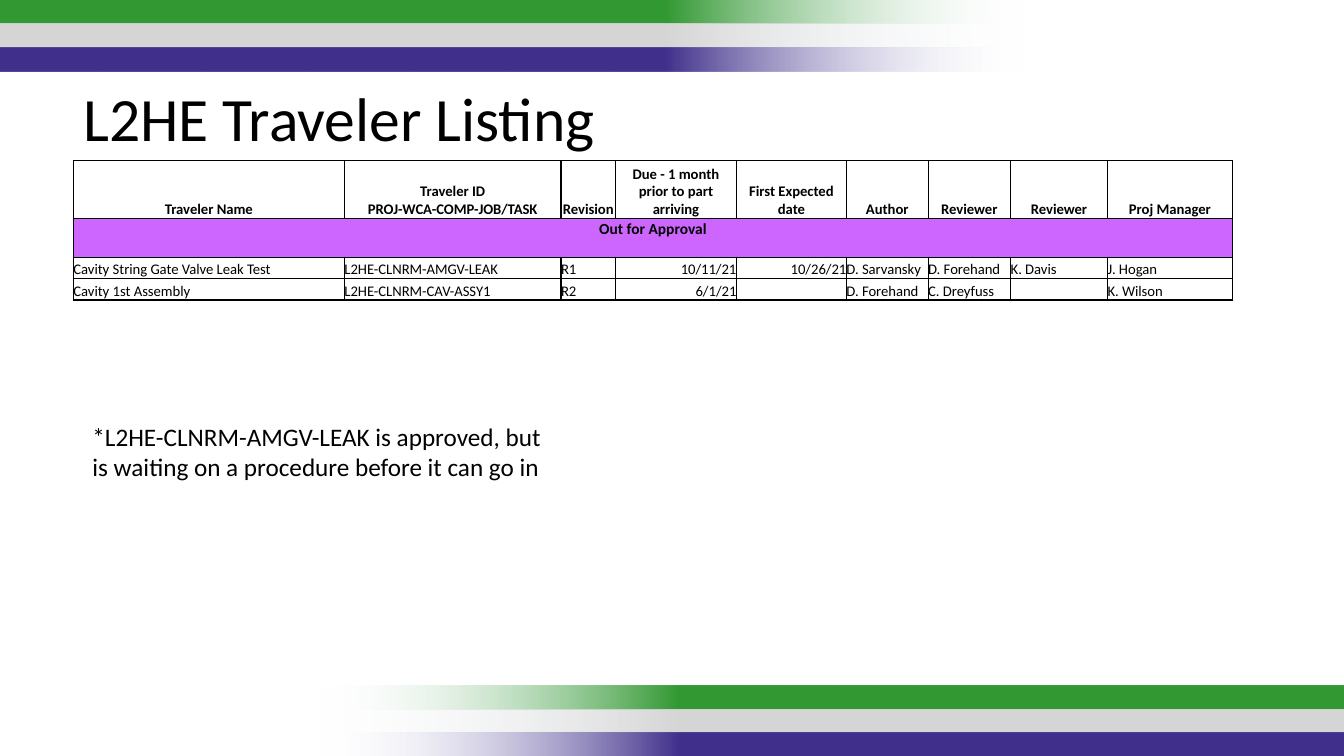
from dataclasses import dataclass

from lxml.etree import SubElement
from pptx import Presentation
from pptx.dml.color import RGBColor
from pptx.enum.shapes import MSO_SHAPE as Shape
from pptx.enum.text import MSO_ANCHOR as Anchor, PP_ALIGN as Align
from pptx.oxml import parse_xml
from pptx.oxml.ns import nsdecls, qn
from pptx.util import Cm, Pt


@dataclass(frozen=True)
class Theme:
    """Colours and type sizes of the slide."""
    font: str = "Calibri"
    ink: str = "000000"
    fade: str = "F7FAFD"
    stripes: tuple = ("339933", "D6D6D6", "42318C")
    status: str = "CC66FF"
    title_size: float = 44
    note_size: float = 18
    status_size: float = 11
    cell_size: float = 10.5
    rule_width: float = 1


THEME = Theme()
HEADINGS = ["Traveler Name", "Traveler ID\vPROJ-WCA-COMP-JOB/TASK", "Revision",
            "Due - 1 month prior to part arriving", "First Expected date",
            "Author", "Reviewer", "Reviewer", "Proj Manager"]
STATUS = "Out for Approval"
TRAVELERS = [
    ["Cavity String Gate Valve Leak Test", "L2HE-CLNRM-AMGV-LEAK", "R1", "10/11/21",
     "10/26/21", "D. Sarvansky", "D. Forehand", "K. Davis", "J. Hogan"],
    ["Cavity 1st Assembly", "L2HE-CLNRM-CAV-ASSY1", "R2", "6/1/21",
     "", "D. Forehand", "C. Dreyfuss", "", "K. Wilson"],
]
COLUMN_WIDTHS = [6.83, 5.46, 1.37, 3.05, 2.77, 2.06, 2.08, 2.44, 3.15]
ROW_HEIGHTS = [1.46, 0.97, 0.54, 0.54]
DATE_COLUMNS = (3, 4)


def style(paragraph, size, bold=False, align=Align.LEFT):
    """Set the type of one paragraph."""
    paragraph.alignment = align
    font = paragraph.font
    font.name, font.size, font.bold = THEME.font, Pt(size), bold
    font.color.rgb = RGBColor.from_string(THEME.ink)


def add_stripes(slide, left, top, width, height, rotation=0):
    """Stack the three stripes, each fading out towards one end."""
    pitch = height / len(THEME.stripes)
    for index, colour in enumerate(THEME.stripes):
        stripe = slide.shapes.add_shape(Shape.RECTANGLE, Cm(left), Cm(top + index * pitch),
                                        Cm(width), Cm(pitch))
        stripe.rotation = rotation
        stripe.shadow.inherit = False
        stripe.line.fill.background()
        stripe.fill.gradient()
        stripe.fill.gradient_angle = 0
        stops = stripe.fill._fill._gradFill.find(qn("a:gsLst"))
        stops.getparent().replace(stops, parse_xml(
            f'<a:gsLst {nsdecls("a")}>'
            f'<a:gs pos="0"><a:srgbClr val="{THEME.fade}"><a:alpha val="0"/></a:srgbClr></a:gs>'
            f'<a:gs pos="35000"><a:srgbClr val="{colour}"/></a:gs>'
            f'<a:gs pos="100000"><a:srgbClr val="{colour}"/></a:gs></a:gsLst>'))


def add_text(slide, left, top, width, height, text, size):
    """Place one wrapped paragraph of text."""
    frame = slide.shapes.add_textbox(Cm(left), Cm(top), Cm(width), Cm(height)).text_frame
    frame.word_wrap = True
    frame.text = text
    style(frame.paragraphs[0], size)


def add_borders(cell):
    """Rule all four sides of a cell."""
    properties = cell._tc.get_or_add_tcPr()
    for index, side in enumerate(("a:lnL", "a:lnR", "a:lnT", "a:lnB")):
        rule = SubElement(properties, qn(side), w=str(Pt(THEME.rule_width)))
        SubElement(SubElement(rule, qn("a:solidFill")), qn("a:srgbClr"), val=THEME.ink)
        properties.insert(index, rule)


def fill_cell(cell, text, size, bold, align, anchor=Anchor.BOTTOM, inset=0):
    """Write and format one table cell."""
    cell.text = text
    cell.vertical_anchor = anchor
    cell.margin_left = cell.margin_right = cell.margin_top = Cm(inset)
    cell.margin_bottom = Cm(0)
    style(cell.text_frame.paragraphs[0], size, bold, align)
    cell.fill.background()
    add_borders(cell)


def add_listing(slide, left, top, width, height):
    """Build the traveler table with its status band."""
    listing = slide.shapes.add_table(len(ROW_HEIGHTS), len(COLUMN_WIDTHS), Cm(left), Cm(top),
                                     Cm(width), Cm(height)).table
    listing.first_row = listing.horz_banding = False
    for column, share in zip(listing.columns, COLUMN_WIDTHS):
        column.width = Cm(width * share / sum(COLUMN_WIDTHS))
    for row, share in zip(listing.rows, ROW_HEIGHTS):
        row.height = Cm(height * share / sum(ROW_HEIGHTS))
    for column, heading in enumerate(HEADINGS):
        fill_cell(listing.cell(0, column), heading, THEME.cell_size, True, Align.CENTER,
                  inset=0.02)
        fill_cell(listing.cell(1, column), "" if column else STATUS, THEME.status_size, True,
                  Align.CENTER, Anchor.TOP, 0.02)
        align = Align.RIGHT if column in DATE_COLUMNS else Align.LEFT
        for row, traveler in enumerate(TRAVELERS, 2):
            fill_cell(listing.cell(row, column), traveler[column], THEME.cell_size, False, align)
    band = listing.cell(1, 0)
    band.merge(listing.cell(1, len(HEADINGS) - 1))
    band.fill.solid()
    band.fill.fore_color.rgb = RGBColor.from_string(THEME.status)


def main():
    """Build the slide and save it."""
    deck = Presentation()
    deck.slide_width, deck.slide_height = Cm(33.87), Cm(19.05)
    slide = deck.slides.add_slide(deck.slide_layouts[6])
    add_stripes(slide, -0.03, 0, 25.83, 1.8, rotation=180)
    add_stripes(slide, 8.07, 17.27, 25.83, 1.8)
    add_listing(slide, 1.85, 4.05, 29.21, 3.51)
    add_text(slide, 1.85, 1.9, 26.19, 2.13, "L2HE Traveler Listing", THEME.title_size)
    add_text(slide, 2.08, 10.49, 12.12, 1.8,
             "*L2HE-CLNRM-AMGV-LEAK is approved, but is waiting on a procedure "
             "before it can go in", THEME.note_size)
    deck.save("out.pptx")


if __name__ == "__main__":
    main()
